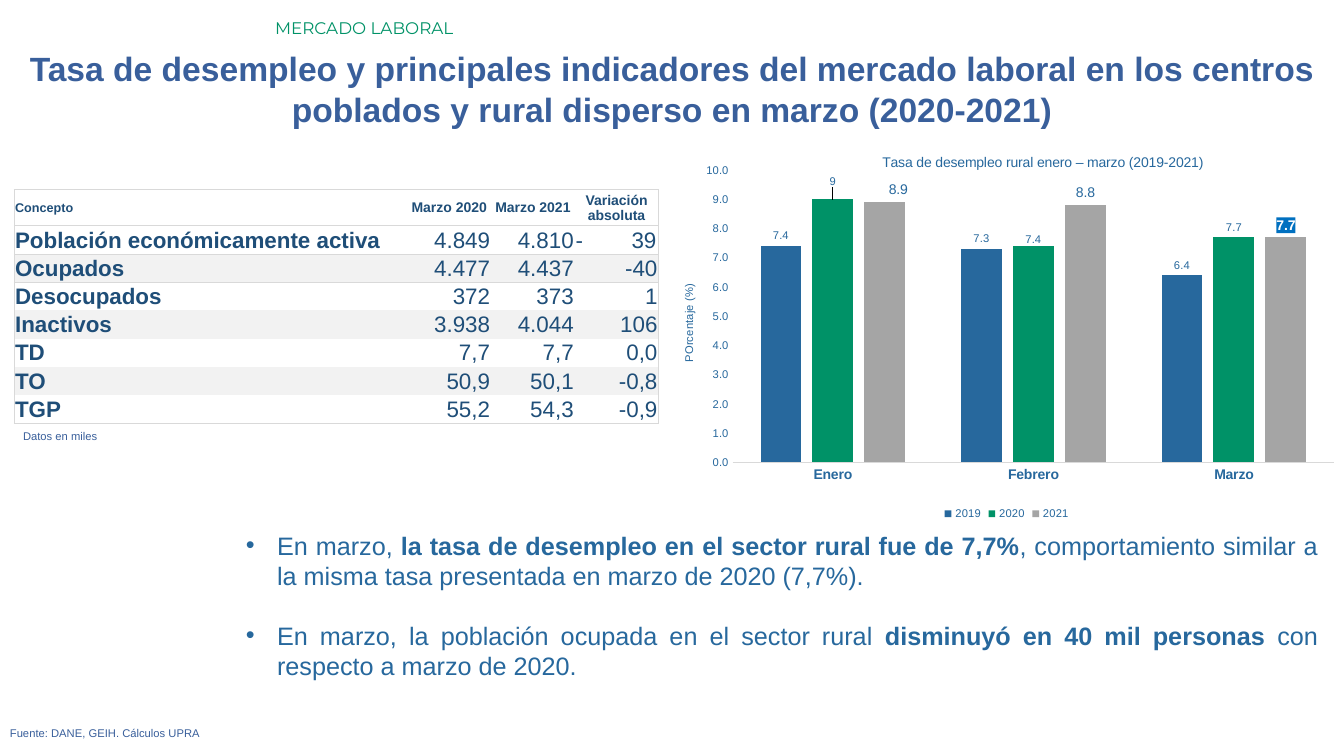
from dataclasses import dataclass
from typing import NamedTuple

from lxml.etree import SubElement
from pptx import Presentation
from pptx.chart.chart import Chart
from pptx.chart.data import CategoryChartData
from pptx.dml.color import RGBColor
from pptx.enum.chart import XL_CHART_TYPE, XL_LABEL_POSITION, XL_LEGEND_POSITION, XL_TICK_MARK
from pptx.enum.text import MSO_ANCHOR, MSO_AUTO_SIZE, PP_ALIGN
from pptx.oxml import parse_xml
from pptx.oxml.ns import nsdecls, qn
from pptx.slide import Slide
from pptx.table import _Cell
from pptx.text.text import Font
from pptx.util import Inches, Pt


@dataclass(frozen=True)
class Theme:
    font: str = "Arial"
    section_font: str = "Montserrat"
    green: str = "009267"
    navy: str = "395F9B"
    blue: str = "27689D"
    table_text: str = "1F4E78"
    gray: str = "A5A5A5"
    line: str = "D9D9D9"
    band: str = "F2F2F2"
    white: str = "FFFFFF"
    highlight: str = "0070C0"
    title_size: int = 24
    body_size: int = 18
    table_size: int = 16
    section_size: int = 12
    label_size: int = 10
    concept_size: int = 9
    small_size: int = 8


THEME = Theme()


class Span(NamedTuple):
    text: str
    bold: bool = False


@dataclass(frozen=True)
class TextBox:
    left: float
    top: float
    width: float
    height: float
    paragraphs: list[list[Span]]
    size: int
    color: str
    align: PP_ALIGN = PP_ALIGN.JUSTIFY
    font: str = THEME.font
    bulleted: bool = False


@dataclass(frozen=True)
class Series:
    name: str
    values: tuple[float, ...]
    color: str
    label_size: int


class LabelShift(NamedTuple):
    series: int
    point: int
    x: float
    y: float


TEXT_BOXES = [
    TextBox(2.63, 0.13, 10.7, 0.3, [[Span("MERCADO LABORAL")]], THEME.section_size, THEME.green,
            PP_ALIGN.LEFT, THEME.section_font),
    TextBox(0, 0.43, 13.33, 0.91, [[Span(
        "Tasa de desempleo y principales indicadores del mercado laboral en los centros "
        "poblados y rural disperso en marzo (2020-2021)", True)]],
        THEME.title_size, THEME.navy, PP_ALIGN.CENTER),
    TextBox(0, 7.16, 12.91, 0.24, [[Span("Fuente: DANE, GEIH. Cálculos UPRA")]],
            THEME.small_size, THEME.navy),
    TextBox(2.34, 5.21, 10.83, 1.62, [
        [Span("En marzo, "), Span("la tasa de desempleo en el sector rural fue de 7,7%", True),
         Span(", comportamiento similar a la misma tasa presentada en marzo de 2020 (7,7%).")],
        [Span("En marzo, la población ocupada en el sector rural "),
         Span("disminuyó en 40 mil personas ", True), Span("con respecto a marzo de 2020.")],
    ], THEME.body_size, THEME.blue, bulleted=True),
    TextBox(0.13, 4.21, 6.25, 0.24, [[Span("Datos en miles")]], THEME.small_size, THEME.navy),
]

INDICATORS = [
    ("Concepto", "Marzo 2020", "Marzo 2021", "Variación absoluta"),
    ("Población económicamente activa", "4.849", "4.810", "-\t39"),
    ("Ocupados", "4.477", "4.437", "-40"),
    ("Desocupados", "372", "373", "1"),
    ("Inactivos", "3.938", "4.044", "106"),
    ("TD", "7,7", "7,7", "0,0"),
    ("TO", "50,9", "50,1", "-0,8"),
    ("TGP", "55,2", "54,3", "-0,9"),
]
COLUMN_WIDTHS = (3.9, 0.83, 0.83, 0.83)
HEADER_HEIGHT, ROW_HEIGHT = 0.36, 0.28

MONTHS = ("Enero", "Febrero", "Marzo")
RATES = [
    Series("2019", (7.4, 7.3, 6.4), THEME.blue, THEME.small_size),
    Series("2020", (9, 7.4, 7.7), THEME.green, THEME.small_size),
    Series("2021", (8.9, 8.8, 7.7), THEME.gray, THEME.label_size),
]
LABEL_SHIFTS = [LabelShift(1, 0, 0, -0.02), LabelShift(1, 1, 0, 0.01), LabelShift(2, 0, 0.02, 0)]


def style_font(font: Font, size: int, color: str, bold: bool = False, name: str = THEME.font) -> None:
    font.name, font.size, font.bold = name, Pt(size), bold
    font.color.rgb = RGBColor.from_string(color)


def add_text_box(slide: Slide, box: TextBox) -> None:
    shape = slide.shapes.add_textbox(*map(Inches, (box.left, box.top, box.width, box.height)))
    frame = shape.text_frame
    frame.word_wrap = True
    frame.auto_size = MSO_AUTO_SIZE.SHAPE_TO_FIT_TEXT
    for index, spans in enumerate(box.paragraphs):
        paragraph = frame.add_paragraph() if index else frame.paragraphs[0]
        paragraph.alignment = box.align
        if index:
            paragraph.space_before = Pt(21)
        if box.bulleted:
            properties = paragraph._p.get_or_add_pPr()
            properties.set("marL", str(Inches(0.31)))
            properties.set("indent", str(-Inches(0.31)))
            SubElement(properties, qn("a:buFont"), typeface=THEME.font)
            SubElement(properties, qn("a:buChar"), char="•")
        for span in spans:
            run = paragraph.add_run()
            run.text = span.text
            style_font(run.font, box.size, box.color, span.bold, box.font)


def add_borders(cell: _Cell, sides: str) -> None:
    properties = cell._tc.get_or_add_tcPr()
    for side in sides:
        properties.append(parse_xml(
            f'<a:ln{side} {nsdecls("a")} w="6350"><a:solidFill>'
            f'<a:srgbClr val="{THEME.line}"/></a:solidFill></a:ln{side}>'))


def fill_cell(cell: _Cell, text: str, row: int, column: int) -> None:
    last_row, last_column = len(INDICATORS) - 1, len(COLUMN_WIDTHS) - 1
    rules = {"L": column == 0, "R": column == last_column, "T": row <= 2, "B": row in (0, 1, last_row)}
    add_borders(cell, "".join(side for side, drawn in rules.items() if drawn))
    cell.fill.solid()
    banded = row > 0 and row % 2 == 0
    cell.fill.fore_color.rgb = RGBColor.from_string(THEME.band if banded else THEME.white)
    cell.margin_left = cell.margin_right = cell.margin_top = Inches(0.01)
    cell.margin_bottom = 0
    cell.vertical_anchor = MSO_ANCHOR.MIDDLE
    paragraph = cell.text_frame.paragraphs[0]
    paragraph.text = text
    if column == 0 or "\t" in text:
        paragraph.alignment = PP_ALIGN.LEFT
    else:
        paragraph.alignment = PP_ALIGN.RIGHT if row else PP_ALIGN.CENTER
    if "\t" in text:
        tabs = SubElement(paragraph._p.get_or_add_pPr(), qn("a:tabLst"))
        SubElement(tabs, qn("a:tab"), pos=str(Inches(0.8)), algn="r")
    header_size = THEME.label_size if column else THEME.concept_size
    size = THEME.table_size if row else header_size
    for run in paragraph.runs:
        style_font(run.font, size, THEME.table_text, row == 0 or column == 0)


def add_indicator_table(slide: Slide) -> None:
    height = HEADER_HEIGHT + ROW_HEIGHT * (len(INDICATORS) - 1)
    frame = slide.shapes.add_table(len(INDICATORS), len(COLUMN_WIDTHS), Inches(0.14), Inches(1.88),
                                   Inches(sum(COLUMN_WIDTHS)), Inches(height))
    table = frame.table
    table.first_row = table.horz_banding = False
    table._tbl.tblPr.find(qn("a:tableStyleId")).text = "{2D5ABB26-0587-4C30-8999-92F81FD0307C}"
    for column, width in enumerate(COLUMN_WIDTHS):
        table.columns[column].width = Inches(width)
    for row, texts in enumerate(INDICATORS):
        table.rows[row].height = Inches(ROW_HEIGHT if row else HEADER_HEIGHT)
        for column, text in enumerate(texts):
            fill_cell(table.cell(row, column), text, row, column)


def set_layout(parent, index: int, settings: dict[str, object]) -> None:
    for previous in parent.findall(qn("c:layout")):
        parent.remove(previous)
    values = "".join(f'<c:{name} val="{value}"/>' for name, value in settings.items())
    parent.insert(index, parse_xml(
        f'<c:layout {nsdecls("c")}><c:manualLayout>{values}</c:manualLayout></c:layout>'))


def set_title(owner: Chart, title, text: str, size: int, x: float, y: float) -> None:
    title.text_frame.text = text
    style_font(title.text_frame.paragraphs[0].runs[0].font, size, THEME.blue)
    set_layout(title._element, 1, {"xMode": "edge", "yMode": "edge", "x": x, "y": y})


def style_axes(chart: Chart) -> None:
    months, rates = chart.category_axis, chart.value_axis
    months.major_tick_mark = rates.major_tick_mark = XL_TICK_MARK.NONE
    style_font(months.tick_labels.font, THEME.label_size, THEME.blue, True)
    months.format.line.color.rgb = RGBColor.from_string(THEME.line)
    months.format.line.width = Pt(0.75)
    rates.minimum_scale, rates.maximum_scale, rates.major_unit = 0, 10, 1
    rates.has_major_gridlines = False
    rates.format.line.fill.background()
    style_font(rates.tick_labels.font, THEME.small_size, THEME.blue)
    rates.tick_labels.number_format = "#,##0.0"
    rates.tick_labels.number_format_is_linked = False
    set_title(chart, rates.axis_title, "POrcentaje (%)", THEME.small_size, 0.01, 0.37)


def style_point_label(chart: Chart, series: int, point: int, color: str, bold: bool = False):
    label = chart.plots[0].series[series].points[point].data_label
    style_font(label.font, RATES[series].label_size, color, bold)
    label.position = XL_LABEL_POSITION.OUTSIDE_END
    return chart.element.xpath(f'.//c:ser[c:idx/@val="{series}"]//c:dLbl[c:idx/@val="{point}"]')[0]


def add_rate_chart(slide: Slide) -> None:
    data = CategoryChartData()
    data.categories = MONTHS
    for series in RATES:
        data.add_series(series.name, series.values)
    chart = slide.shapes.add_chart(XL_CHART_TYPE.COLUMN_CLUSTERED, Inches(6.67), Inches(1.38),
                                   Inches(6.63), Inches(3.82), data).chart
    style_font(chart.font, THEME.small_size, THEME.blue)
    chart.has_title = True
    set_title(chart, chart.chart_title, "Tasa de desempleo rural enero – marzo (2019-2021)",
              THEME.label_size, 0.31, 0.03)
    chart.has_legend = True
    chart.legend.position = XL_LEGEND_POSITION.BOTTOM
    chart.legend.include_in_layout = False
    style_font(chart.legend.font, THEME.small_size, THEME.blue)
    style_axes(chart)
    plot = chart.plots[0]
    plot.vary_by_categories, plot.gap_width, plot.overlap = False, 136, -27
    for series, bars in zip(RATES, plot.series):
        bars.format.fill.solid()
        bars.format.fill.fore_color.rgb = RGBColor.from_string(series.color)
        bars.data_labels.show_value = True
        bars.data_labels.position = XL_LABEL_POSITION.OUTSIDE_END
        style_font(bars.data_labels.font, series.label_size, THEME.blue)
    for shift in LABEL_SHIFTS:
        label = style_point_label(chart, shift.series, shift.point, THEME.blue)
        set_layout(label, 1, {"x": shift.x, "y": shift.y})
    march = style_point_label(chart, 2, 2, THEME.white, True)
    for previous in march.findall(qn("c:spPr")):
        march.remove(previous)
    march.find(qn("c:txPr")).addprevious(parse_xml(
        f'<c:spPr {nsdecls("c", "a")}><a:solidFill><a:srgbClr val="{THEME.highlight}"/>'
        '</a:solidFill></c:spPr>'))
    set_layout(chart.element.xpath(".//c:plotArea")[0], 0, {
        "layoutTarget": "inner", "xMode": "edge", "yMode": "edge",
        "x": 0.09, "y": 0.08, "w": 0.9, "h": 0.76})


def main() -> None:
    presentation = Presentation()
    presentation.slide_width, presentation.slide_height = Inches(13.33), Inches(7.5)
    slide = presentation.slides.add_slide(presentation.slide_layouts[6])
    for box in TEXT_BOXES:
        add_text_box(slide, box)
    add_indicator_table(slide)
    add_rate_chart(slide)
    presentation.save("out.pptx")


if __name__ == "__main__":
    main()
